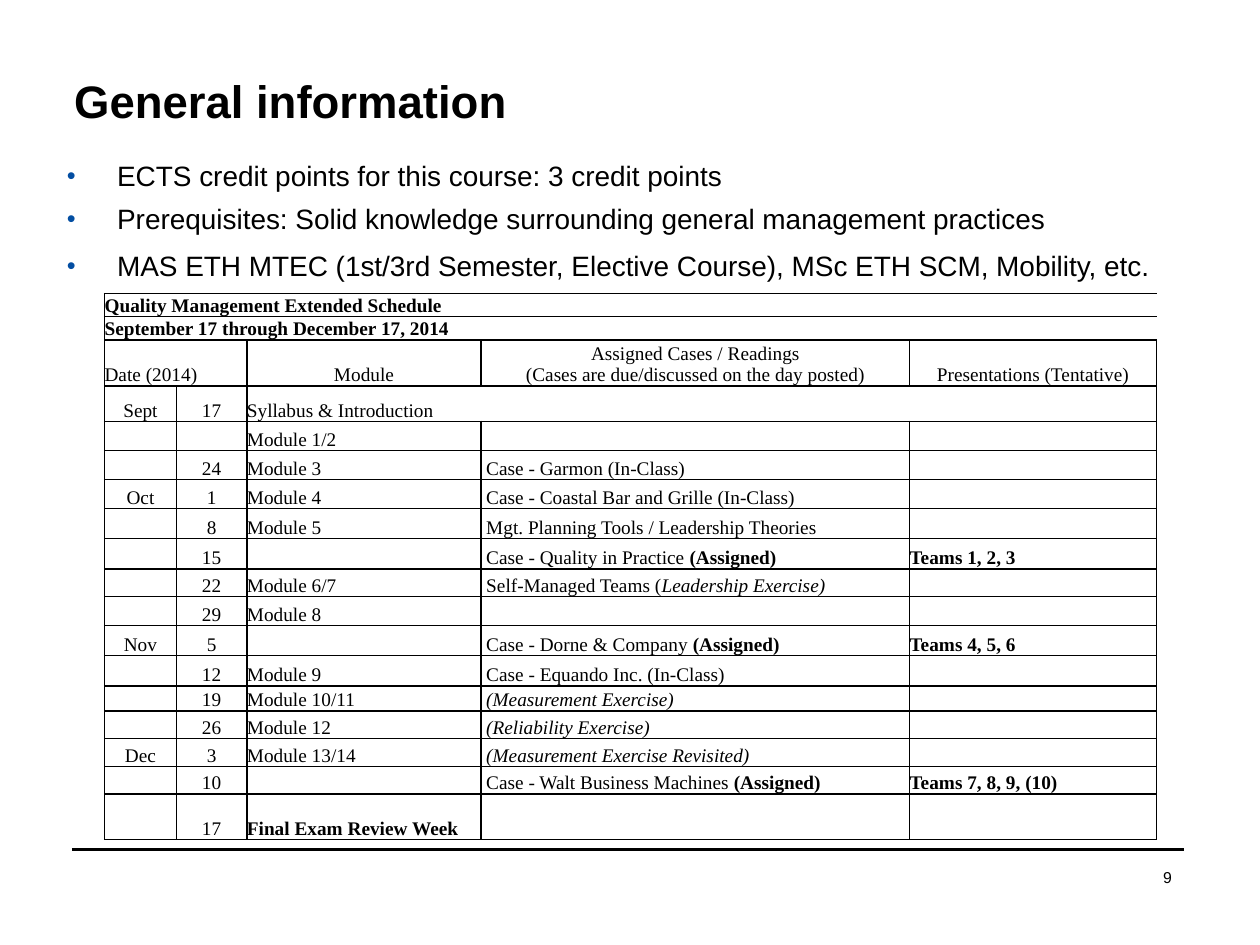
import dataclasses

import pptx
import pptx.dml.color
import pptx.enum.shapes
import pptx.enum.text
import pptx.oxml.ns
import pptx.util
from lxml import etree

ALIGN = pptx.enum.text.PP_ALIGN
ANCHOR = pptx.enum.text.MSO_ANCHOR
Pt = pptx.util.Pt


@dataclasses.dataclass(frozen=True)
class Theme:
    ink: str = "000000"
    bullet: str = "034EA2"
    sans: str = "Arial"
    serif: str = "Times New Roman"
    title: int = 26
    body: int = 16
    table: int = 11
    footer: int = 9
    rule: float = 1.5
    border: float = 1
    plain_table: str = "{2D5ABB26-0587-4C30-8999-92F81FD0307C}"


def add_element(parent, tag, **attributes):
    return etree.SubElement(parent, pptx.oxml.ns.qn(tag), attributes)


def grid(units):
    """The slide is a grid of 100 columns and 75 rows, a tenth of an inch each."""
    return pptx.util.Inches(units / 10)


class SlideBuilder:
    def __init__(self, presentation, theme):
        self.theme = theme
        self.slide = presentation.slides.add_slide(presentation.slide_layouts[6])

    def style(self, run, font, size, marks=""):
        run.font.name = font
        run.font.size = Pt(size)
        run.font.bold = "b" in marks
        run.font.italic = "i" in marks
        run.font.color.rgb = pptx.dml.color.RGBColor.from_string(self.theme.ink)

    def text(self, box, content, size, marks="", insets=(0, 0), align=ALIGN.LEFT, wrap=True):
        shape = self.slide.shapes.add_textbox(*map(grid, box))
        frame = shape.text_frame
        frame.word_wrap = wrap
        frame.margin_left = frame.margin_right = grid(insets[0])
        frame.margin_top = frame.margin_bottom = grid(insets[1])
        frame.text = content
        for paragraph in frame.paragraphs:
            paragraph.alignment = align
            for run in paragraph.runs:
                self.style(run, self.theme.sans, size, marks)
        return frame

    def bullets(self, box, items):
        frame = self.text(box, "\n".join(items), self.theme.body, insets=(0.4, 0.6))
        for index, paragraph in enumerate(frame.paragraphs):
            paragraph.line_spacing = 1.0 if index == len(items) - 1 else 0.9
            paragraph.space_before = Pt(3.6 if index else 0)
            paragraph.space_after = Pt(3.8)
            properties = paragraph._p.get_or_add_pPr()
            properties.set("marL", str(grid(4)))
            properties.set("indent", str(-grid(4)))
            color = add_element(properties, "a:buClr")
            add_element(color, "a:srgbClr", val=self.theme.bullet)
            add_element(properties, "a:buSzPct", val="90000")
            add_element(properties, "a:buFont", typeface=self.theme.sans)
            add_element(properties, "a:buChar", char="•")

    def rule(self, left, right, top):
        line = self.slide.shapes.add_connector(
            pptx.enum.shapes.MSO_CONNECTOR.STRAIGHT,
            grid(left), grid(top), grid(right), grid(top))
        line.line.width = Pt(self.theme.rule)
        line.line.color.rgb = pptx.dml.color.RGBColor.from_string(self.theme.ink)
        add_element(line._element.spPr, "a:effectLst")

    def borders(self, cell, sides):
        properties = cell._tc.get_or_add_tcPr()
        for side in sides:
            line = add_element(properties, "a:ln" + side, w=str(Pt(self.theme.border)))
            fill = add_element(line, "a:solidFill")
            add_element(fill, "a:srgbClr", val=self.theme.ink)

    def cell(self, cell, content, align, indent, sides):
        cell.margin_left = grid(indent)
        cell.margin_right = cell.margin_top = cell.margin_bottom = 0
        cell.vertical_anchor = ANCHOR.BOTTOM
        self.borders(cell, sides)
        cell.fill.background()
        segments = [(content, "")] if isinstance(content, str) else content
        frame = cell.text_frame
        frame.text = segments[0][0]
        for paragraph in frame.paragraphs:
            paragraph.alignment = align
            for run in paragraph.runs:
                self.style(run, self.theme.serif, self.theme.table, segments[0][1])
            if not paragraph.runs:
                # Keeps an empty row from growing to the default text size
                paragraph._p.get_or_add_endParaRPr().set("sz", str(self.theme.table * 100))
        for words, marks in segments[1:]:
            run = frame.paragraphs[-1].add_run()
            run.text = words
            self.style(run, self.theme.serif, self.theme.table, marks)

    def schedule(self, left, top, widths, rows, merges, banner_rows, header_row):
        frame = self.slide.shapes.add_table(
            len(rows), len(widths), grid(left), grid(top),
            grid(sum(widths)), grid(sum(row[0] for row in rows)))
        table = frame.table
        table.first_row = table.horz_banding = False
        table._tbl.tblPr.find(pptx.oxml.ns.qn("a:tableStyleId")).text = self.theme.plain_table
        for column, width in zip(table.columns, widths):
            column.width = grid(width)
        for row, first, last in merges:
            table.cell(row, first).merge(table.cell(row, last))
        for row, (height, *contents) in enumerate(rows):
            table.rows[row].height = grid(height)
            for column, content in enumerate(contents):
                cell = table.cell(row, column)
                is_header = row == header_row and column > 0
                is_date = row > header_row and column < 2
                align = ALIGN.CENTER if is_header or is_date else ALIGN.LEFT
                indent = 0.4 if row > header_row and column == 3 else 0
                sides = "" if cell.is_spanned else "L"
                if row not in banner_rows and (not cell.is_spanned or column == len(widths) - 1):
                    sides += "R"
                self.cell(cell, content, align, indent, sides + "TB")


ASSIGNED = ("(Assigned)", "b")

# Row height, month, day, module, reading, presentation
SCHEDULE = [
    (1.8, [("Quality Management Extended Schedule", "b")], "", "", "", ""),
    (1.8, [("September 17 through December 17, 2014", "b")], "", "", "", ""),
    (3.6, "Date (2014)", "", "Module",
     "Assigned Cases / Readings\n(Cases are due/discussed on the day posted)",
     "Presentations (Tentative)"),
    (2.8, "Sept", "17", "Syllabus & Introduction", "", ""),
    (2.3, "", "", "Module 1/2", "", ""),
    (2.3, "", "24", "Module 3", "Case - Garmon (In-Class)", ""),
    (2.3, "Oct", "1", "Module 4", "Case - Coastal Bar and Grille (In-Class)", ""),
    (2.4, "", "8", "Module 5", "Mgt. Planning Tools / Leadership Theories", ""),
    (2.4, "", "15", "", [("Case - Quality in Practice ", ""), ASSIGNED],
     [("Teams 1, 2, 3", "b")]),
    (2.2, "", "22", "Module 6/7",
     [("Self-Managed Teams (", ""), ("Leadership Exercise)", "i")], ""),
    (2.3, "", "29", "Module 8", "", ""),
    (2.4, "Nov", "5", "", [("Case - Dorne & Company ", ""), ASSIGNED],
     [("Teams 4, 5, 6", "b")]),
    (2.4, "", "12", "Module 9", "Case - Equando Inc. (In-Class)", ""),
    (2.0, "", "19", "Module 10/11", [("(Measurement Exercise)", "i")], ""),
    (2.2, "", "26", "Module 12", [("(Reliability Exercise)", "i")], ""),
    (2.2, "Dec", "3", "Module 13/14", [("(Measurement Exercise Revisited)", "i")], ""),
    (2.2, "", "10", "", [("Case - Walt Business Machines ", ""), ASSIGNED],
     [("Teams 7, 8, 9, (10)", "b")]),
    (3.6, "", "17", [("Final Exam Review Week", "b")], "", ""),
]


def main():
    presentation = pptx.Presentation()
    presentation.slide_width, presentation.slide_height = grid(100), grid(75)
    theme = Theme()
    builder = SlideBuilder(presentation, theme)

    # Footer rule and page number
    builder.rule(5.7, 94, 67.4)
    builder.text((90.5, 68.9, 2.5, 1.5), "9", theme.footer, align=ALIGN.RIGHT, wrap=False)

    # Title and course facts
    builder.text((4.9, 4.9, 90.1, 11.4), "General information", theme.title, "b", (1, 0.9))
    builder.bullets((4.9, 12.3, 90, 54.3), [
        "ECTS credit points for this course: 3 credit points",
        "Prerequisites: Solid knowledge surrounding general management practices",
        "MAS ETH MTEC (1st/3rd Semester, Elective Course), MSc ETH SCM, Mobility, etc.",
    ])

    # Course schedule
    builder.schedule(
        8.3, 23.3, (5.7, 5.6, 18.6, 34, 19.6), SCHEDULE,
        merges=[(0, 0, 4), (1, 0, 4), (2, 0, 1), (3, 2, 4)],
        banner_rows=(0, 1), header_row=2)

    presentation.save("out.pptx")


if __name__ == "__main__":
    main()
